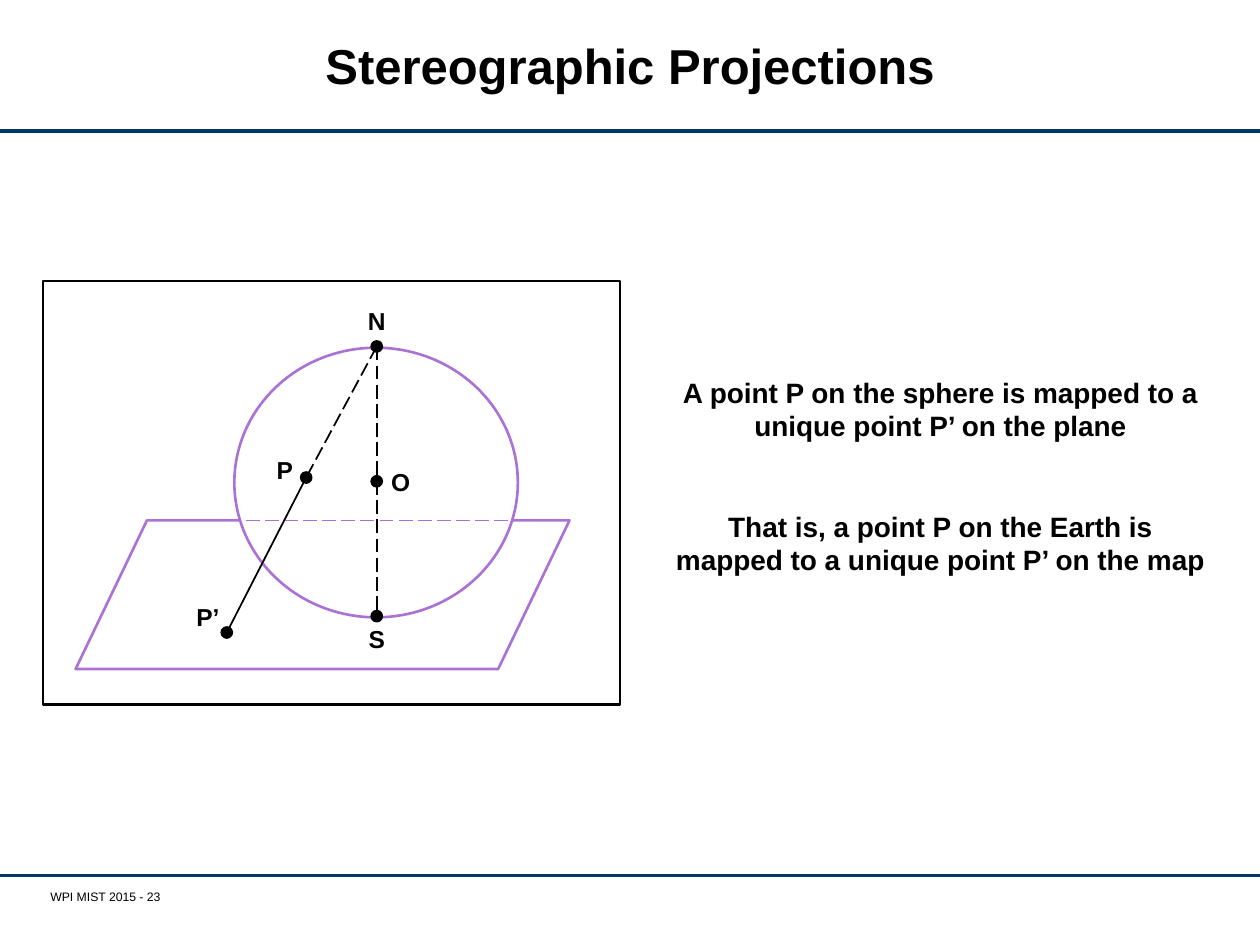
import pptx
import pptx.util
import pptx.dml.color
import pptx.enum.dml
import pptx.enum.shapes
import pptx.enum.text
import pptx.oxml.ns
from lxml import etree

Inches = pptx.util.Inches
Pt = pptx.util.Pt
PRESET = pptx.enum.shapes.MSO_SHAPE
CENTER = pptx.enum.text.PP_ALIGN.CENTER
DASH = pptx.enum.dml.MSO_LINE.LONG_DASH

COLORS = {"ink": "000000", "rule": "003767", "sphere": "AA72D4", "paper": "FFFFFF"}
FONT = "Arial"
DOT = 0.08

# Name: centre inside the diagram, label offset from the centre, label width
POINTS = {
    "N": ((2.65, 0.52), (0, -0.20), 0.34),
    "S": ((2.65, 2.66), (0, 0.18), 0.34),
    "O": ((2.65, 1.59), (0.19, 0.01), 0.35),
    "P": ((2.09, 1.56), (-0.17, -0.06), 0.34),
    "P’": ((1.46, 2.79), (-0.15, -0.12), 0.39),
}


def color(name):
    return pptx.dml.color.RGBColor.from_string(COLORS[name])


def style_paragraph(paragraph, size, bold=True, align=CENTER):
    paragraph.alignment = align
    for run in paragraph.runs:
        run.font.name = FONT
        run.font.size = Pt(size)
        run.font.bold = bold
        run.font.color.rgb = color("ink")


def add_line(shapes, start, end, line_color, width, dash=None):
    line = shapes.add_connector(
        pptx.enum.shapes.MSO_CONNECTOR.STRAIGHT,
        *(Inches(value) for value in (*start, *end)))
    line.line.color.rgb = color(line_color)
    line.line.width = Pt(width)
    if dash:
        line.line.dash_style = dash
    etree.SubElement(line._element.spPr, pptx.oxml.ns.qn("a:effectLst"))


def add_outline(shapes, preset, box, line_color, fill=None):
    outline = shapes.add_shape(preset, *(Inches(value) for value in box))
    outline.shadow.inherit = False
    if fill:
        outline.fill.solid()
        outline.fill.fore_color.rgb = color(fill)
    else:
        outline.fill.background()
    outline.line.color.rgb = color(line_color)
    outline.line.width = Pt(1.5)
    return outline


def add_text(shapes, box, paragraphs, size, wrap=True, **style):
    textbox = shapes.add_textbox(*(Inches(value) for value in box))
    frame = textbox.text_frame
    frame.word_wrap = wrap
    frame.text = "\n".join(paragraphs)
    for paragraph in frame.paragraphs:
        style_paragraph(paragraph, size, **style)
    return frame


def add_header(slide, left, top, width, height):
    title = slide.shapes.title
    title.left, title.top = Inches(left + 1.03), Inches(top + 0.11)
    title.width, title.height = Inches(width - 2.06), Inches(0.89)
    title.text_frame.text = "Stereographic Projections"
    title.text_frame.vertical_anchor = pptx.enum.text.MSO_ANCHOR.MIDDLE
    heading = title.text_frame.paragraphs[0]
    heading.line_spacing = Pt(28)
    style_paragraph(heading, 28)
    bottom = top + height
    add_line(slide.shapes, (left, bottom), (left + width, bottom), "rule", 1.75)


def add_footer(slide, left, top, width):
    add_line(slide.shapes, (left, top), (left + width, top), "rule", 1.75)
    footer = add_text(slide.shapes, (left + 0.35, top + 0.11, 1.45, 0.24),
                      ["WPI MIST 2015 - 23"], 7, bold=False,
                      align=pptx.enum.text.PP_ALIGN.LEFT)
    footer.margin_left = Inches(0.05)
    footer.margin_right = footer.margin_top = footer.margin_bottom = 0


def add_projection(slide, left, top, width, height):
    """Draw the sphere resting on the map plane, with P projected from N to P’."""
    shapes = slide.shapes
    centers = {name: (left + x, top + y) for name, ((x, y), _, _) in POINTS.items()}

    plane_left, plane_top = left + 0.26, top + 1.9
    plane = add_outline(shapes, PRESET.PARALLELOGRAM,
                        (plane_left, plane_top, 3.92, 1.18), "sphere")
    plane.adjustments[0] = 0.48
    add_outline(shapes, PRESET.OVAL, (left + 1.52, top + 0.53, 2.25, 2.14),
                "sphere", "paper")
    add_line(shapes, (left + 1.46, plane_top), (left + 3.76, plane_top),
             "sphere", 1, DASH)

    add_line(shapes, centers["N"], centers["O"], "ink", 1, DASH)
    add_line(shapes, centers["O"], centers["S"], "ink", 1, DASH)
    ray = shapes.add_group_shape().shapes
    add_line(ray, centers["P"], centers["P’"], "ink", 1)
    add_line(ray, centers["N"], centers["P"], "ink", 1, DASH)

    for name, (_, (shift_x, shift_y), label_width) in POINTS.items():
        x, y = centers[name]
        add_outline(shapes, PRESET.OVAL, (x - DOT / 2, y - DOT / 2, DOT, DOT),
                    "ink", "ink")
        label_box = (x + shift_x - label_width / 2, y + shift_y - 0.17,
                     label_width, 0.34)
        add_text(shapes, label_box, [name], 14, wrap=False)

    add_outline(shapes, PRESET.RECTANGLE, (left, top, width, height), "ink")


def add_explanation(slide, left, top, width, height):
    frame = add_text(slide.shapes, (left, top, width, height), [
        "A point P on the sphere is mapped to a unique point P’ on the plane",
        "That is, a point P on the Earth is mapped to a unique point P’ on the map",
    ], 16)
    frame.paragraphs[1].space_before = Pt(38)


def main():
    deck = pptx.Presentation()
    deck.slide_width, deck.slide_height = Inches(10), Inches(7.5)
    slide = deck.slides.add_slide(deck.slide_layouts.get_by_name("Title Only"))
    add_header(slide, 0, 0, 10, 1.04)
    add_projection(slide, 0.34, 2.23, 4.58, 3.36)
    add_explanation(slide, 5.23, 2.93, 4.47, 1.72)
    add_footer(slide, 0, 6.95, 10)
    deck.save("out.pptx")


if __name__ == "__main__":
    main()
